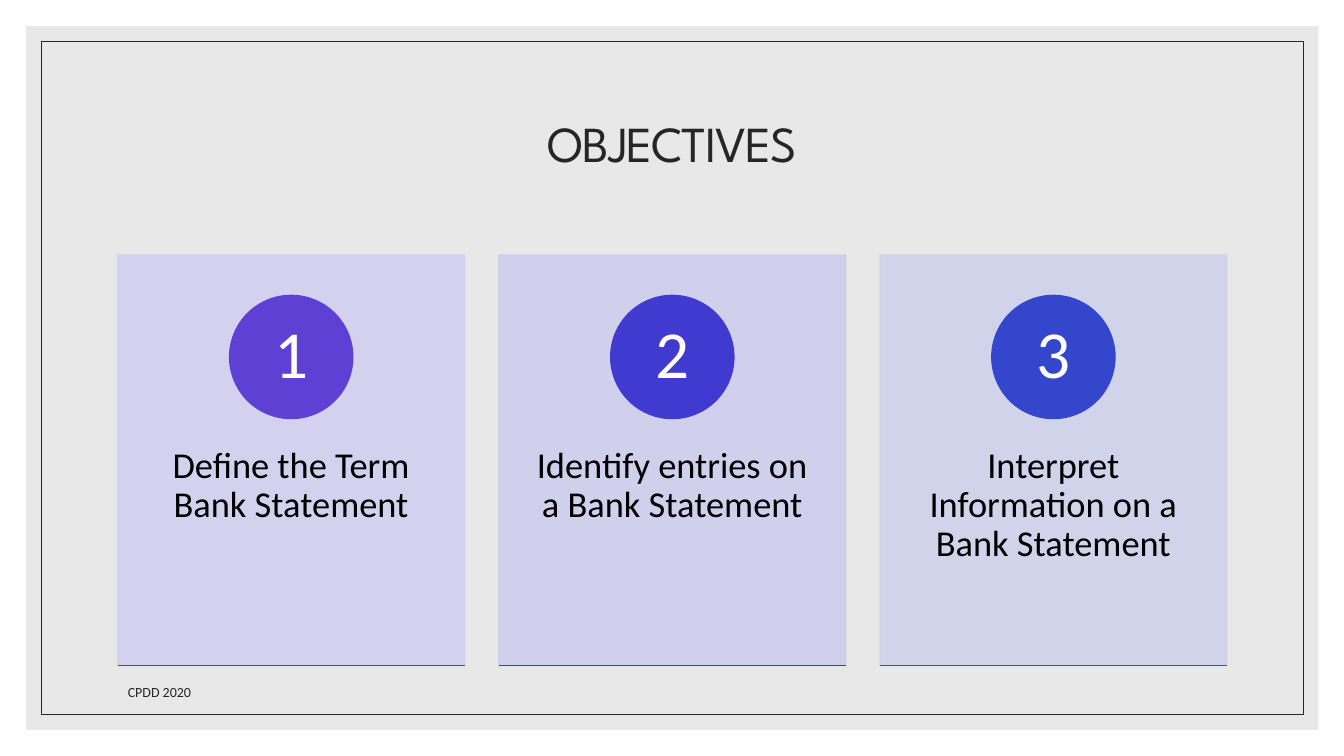
from lxml.etree import SubElement
from pptx import Presentation
from pptx.dml.color import RGBColor
from pptx.enum.shapes import MSO_CONNECTOR, MSO_SHAPE
from pptx.enum.text import MSO_ANCHOR, PP_ALIGN
from pptx.oxml.ns import qn
from pptx.util import Pt

COLORS = {
    "page": "FFFFFF", "panel": "D9D9D9", "ink": "262626",
    "body": "000000", "number": "FFFFFF",
}

# Text, card, circle and base line colours of each objective
OBJECTIVES = [
    ("Define the Term Bank Statement", "D2CFEF", "5F40D5", "503DD3"),
    ("Identify entries on a Bank Statement", "CECEED", "403AD0", "373DCE"),
    ("Interpret Information on a Bank Statement", "CED1EA", "3446CB", "3452C5"),
]

LEFT, CARD_TOP = 84.2, 182.3
CARD_WIDTH, CARD_HEIGHT, CARD_PITCH = 247.7, 293, 272.2
CIRCLE_TOP, CIRCLE_SIZE = 211, 88
NUMBER_SIZE = 62


class ObjectivesSlide:
    def __init__(self, slide):
        self.slide = slide
        self.font = "Calibri"
        background = slide.background.fill
        background.solid()
        background.fore_color.rgb = RGBColor.from_string(COLORS["page"])

    def paint(self, part_format, color, opacity=100):
        part_format.solid()
        part_format.fore_color.rgb = RGBColor.from_string(color)
        if opacity < 100:
            color_xml = part_format._xPr.find(qn("a:solidFill"))[0]
            SubElement(color_xml, qn("a:alpha"), val=str(opacity * 1000))

    def shape(self, kind, box, fill=None, line=None, width=1, opacity=100):
        part = self.slide.shapes.add_shape(kind, *map(Pt, box))
        part.shadow.inherit = False
        if fill:
            self.paint(part.fill, fill, opacity)
        else:
            part.fill.background()
        if line:
            self.paint(part.line.fill, line, opacity)
            part.line.width = Pt(width)
        else:
            part.line.fill.background()

    def rule(self, x, y, length, color):
        line = self.slide.shapes.add_connector(
            MSO_CONNECTOR.STRAIGHT, Pt(x), Pt(y), Pt(x + length), Pt(y))
        self.paint(line.line.fill, color)
        line.line.width = Pt(1)
        SubElement(line._element.spPr, qn("a:effectLst"))

    def text(self, words, box, size, color, font=None, align=PP_ALIGN.CENTER,
             anchor=MSO_ANCHOR.MIDDLE, inset=(7.2, 3.6), line_spacing=0.9,
             tracking=0):
        frame = self.slide.shapes.add_textbox(*map(Pt, box)).text_frame
        frame.word_wrap = True
        frame.vertical_anchor = anchor
        frame.margin_left = frame.margin_right = Pt(inset[0])
        frame.margin_top = frame.margin_bottom = Pt(inset[1])
        paragraph = frame.paragraphs[0]
        paragraph.alignment = align
        paragraph.line_spacing = line_spacing
        run = paragraph.add_run()
        run.text = words
        run.font.name = font or self.font
        run.font.size = Pt(size)
        run.font.color.rgb = RGBColor.from_string(color)
        if tracking:
            run.font._element.set("spc", str(tracking * 100))

    def card(self, number, x, words, card_color, circle_color, base_color):
        self.shape(MSO_SHAPE.RECTANGLE, (x, CARD_TOP, CARD_WIDTH, CARD_HEIGHT),
                   card_color, card_color, opacity=90)
        self.text(words, (x, 293, CARD_WIDTH, 176), 26, COLORS["body"],
                  anchor=MSO_ANCHOR.TOP, inset=(19.3, 26))
        circle_x = x + (CARD_WIDTH - CIRCLE_SIZE) / 2
        self.shape(MSO_SHAPE.OVAL,
                   (circle_x, CIRCLE_TOP, CIRCLE_SIZE, CIRCLE_SIZE),
                   circle_color, circle_color)
        margin = (CIRCLE_SIZE - NUMBER_SIZE) / 2
        self.text(str(number), (circle_x + margin, CIRCLE_TOP + margin,
                                NUMBER_SIZE, NUMBER_SIZE),
                  48, COLORS["number"], inset=(7.2, 0.7))
        self.rule(x, CARD_TOP + CARD_HEIGHT, CARD_WIDTH, base_color)


def main():
    deck = Presentation()
    deck.slide_width, deck.slide_height = Pt(960), Pt(540)
    page = ObjectivesSlide(deck.slides.add_slide(deck.slide_layouts[6]))

    # Panel and frame
    page.shape(MSO_SHAPE.RECTANGLE, (18.7, 18.7, 923, 502.6),
               COLORS["panel"], opacity=60)
    page.shape(MSO_SHAPE.RECTANGLE, (29.5, 29.5, 901.4, 481),
               line=COLORS["ink"], width=0.5)

    # Title
    page.text("OBJECTIVES", (LEFT, 50.4, 792, 108), 36, COLORS["ink"],
              font="League Spartan", tracking=-1)

    # Objective cards
    for index, objective in enumerate(OBJECTIVES):
        page.card(index + 1, LEFT + index * CARD_PITCH, *objective)

    # Footer
    page.text("CPDD 2020", (LEFT, 475.2, 458, 28.8), 10, COLORS["ink"],
              align=PP_ALIGN.LEFT, anchor=MSO_ANCHOR.BOTTOM, line_spacing=1)

    deck.save("out.pptx")


if __name__ == "__main__":
    main()
